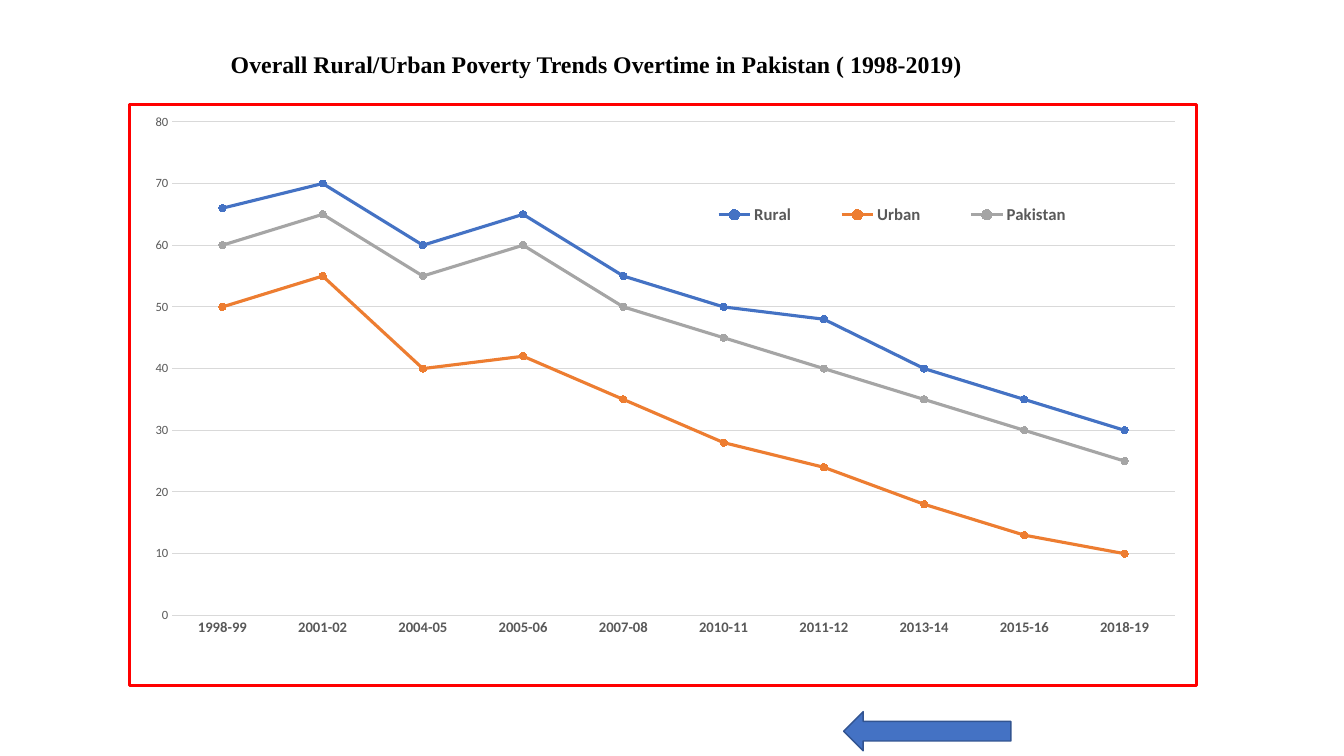
"""Build a slide with a line chart of poverty trends in Pakistan."""
from dataclasses import dataclass

from lxml.etree import _Element as Element
from pptx import Presentation
from pptx.chart.chart import Chart
from pptx.chart.data import CategoryChartData
from pptx.dml.color import RGBColor
from pptx.enum.chart import XL_CHART_TYPE as ChartType
from pptx.enum.chart import XL_LEGEND_POSITION as LegendPos
from pptx.enum.chart import XL_MARKER_STYLE as Marker
from pptx.enum.chart import XL_TICK_MARK as Tick
from pptx.enum.shapes import MSO_SHAPE as Shape
from pptx.enum.text import MSO_AUTO_SIZE as AutoSize
from pptx.oxml import parse_xml
from pptx.oxml.ns import nsdecls, qn
from pptx.slide import Slide
from pptx.text.text import Font
from pptx.util import Pt

COLORS = {
    "black": "000000",
    "blue": "4472C4",
    "orange": "ED7D31",
    "gray": "A5A5A5",
    "label": "595959",
    "grid": "D9D9D9",
    "frame": "FF0000",
    "outline": "325491",
}
YEARS = ["1998-99", "2001-02", "2004-05", "2005-06", "2007-08",
         "2010-11", "2011-12", "2013-14", "2015-16", "2018-19"]


@dataclass(frozen=True)
class Trend:
    name: str
    color: str
    values: tuple[int, ...]


@dataclass(frozen=True)
class Box:
    left: float
    top: float
    width: float
    height: float

    def points(self) -> tuple[Pt, Pt, Pt, Pt]:
        return Pt(self.left), Pt(self.top), Pt(self.width), Pt(self.height)


TRENDS = [
    Trend("Rural", "blue", (66, 70, 60, 65, 55, 50, 48, 40, 35, 30)),
    Trend("Urban", "orange", (50, 55, 40, 42, 35, 28, 24, 18, 13, 10)),
    Trend("Pakistan", "gray", (60, 65, 55, 60, 50, 45, 40, 35, 30, 25)),
]


def rgb(name: str) -> RGBColor:
    return RGBColor.from_string(COLORS[name])


def style_font(font: Font, size: float, color: str, bold: bool = False,
               name: str = "Calibri") -> None:
    font.size, font.bold, font.name = Pt(size), bold, name
    font.color.rgb = rgb(color)


def place(part: Element, index: int, x: float, y: float, w: float, h: float,
          inner: bool = False) -> None:
    for old in part.findall(qn("c:layout")):
        part.remove(old)
    target = '<c:layoutTarget val="inner"/>' if inner else ""
    part.insert(index, parse_xml(
        f'<c:layout {nsdecls("c")}><c:manualLayout>{target}'
        '<c:xMode val="edge"/><c:yMode val="edge"/>'
        f'<c:x val="{x}"/><c:y val="{y}"/><c:w val="{w}"/><c:h val="{h}"/>'
        '</c:manualLayout></c:layout>'))


def add_frame(chart: Chart) -> None:
    chart.element.find(qn("c:chart")).addnext(parse_xml(
        f'<c:spPr {nsdecls("c", "a")}><a:noFill/><a:ln w="{Pt(2.25)}">'
        f'<a:solidFill><a:srgbClr val="{COLORS["frame"]}"/></a:solidFill>'
        '</a:ln></c:spPr>'))


def style_axes(chart: Chart) -> None:
    years, rates = chart.category_axis, chart.value_axis
    for axis in (years, rates):
        axis.major_tick_mark = axis.minor_tick_mark = Tick.NONE
    style_font(years.tick_labels.font, 10.5, "label", bold=True)
    style_font(rates.tick_labels.font, 9, "label")
    rates.minimum_scale, rates.maximum_scale, rates.major_unit = 0, 80, 10
    rates.format.line.fill.background()
    for line in (years.format.line, rates.major_gridlines.format.line):
        line.color.rgb, line.width = rgb("grid"), Pt(0.75)


def add_trend_chart(s: Slide, box: Box) -> None:
    data = CategoryChartData()
    data.categories = YEARS
    for trend in TRENDS:
        data.add_series(trend.name, trend.values)
    chart = s.shapes.add_chart(ChartType.LINE_MARKERS, *box.points(), data).chart
    chart.has_title = False
    style_font(chart.font, 10, "black")
    style_axes(chart)
    chart.plots[0].vary_by_categories = False
    for series, trend in zip(chart.plots[0].series, TRENDS):
        color = rgb(trend.color)
        series.smooth = False
        series.format.line.color.rgb = color
        series.format.line.width = Pt(2.25)
        series.marker.style, series.marker.size = Marker.CIRCLE, 5
        series.marker.format.fill.solid()
        series.marker.format.fill.fore_color.rgb = color
        series.marker.format.line.color.rgb = color
    chart.has_legend = True
    chart.legend.position = LegendPos.BOTTOM
    chart.legend.include_in_layout = False
    style_font(chart.legend.font, 12, "label", bold=True)
    body = chart.element.find(qn("c:chart"))
    place(body.find(qn("c:plotArea")), 0, 0.04, 0.03, 0.94, 0.85, inner=True)
    place(body.find(qn("c:legend")), 1, 0.51, 0.16, 0.41, 0.06)
    add_frame(chart)


def add_title(s: Slide, text: str, box: Box) -> None:
    tf = s.shapes.add_textbox(*box.points()).text_frame
    tf.word_wrap = True
    tf.auto_size = AutoSize.SHAPE_TO_FIT_TEXT
    p = tf.paragraphs[0]
    p.text = text
    style_font(p.runs[0].font, 17, "black", bold=True, name="Times New Roman")


def add_arrow(s: Slide, box: Box) -> None:
    sp = s.shapes.add_shape(Shape.LEFT_ARROW, *box.points())
    sp.shadow.inherit = False
    sp.fill.solid()
    sp.fill.fore_color.rgb = rgb("blue")
    sp.line.color.rgb, sp.line.width = rgb("outline"), Pt(1)


def main() -> None:
    prs = Presentation()
    prs.slide_width, prs.slide_height = Pt(960), Pt(540)
    s = prs.slides.add_slide(prs.slide_layouts[6])
    add_trend_chart(s, Box(91.5, 73.5, 764, 417))
    add_title(s, " Overall Rural/Urban Poverty Trends Overtime in Pakistan ( 1998-2019)",
              Box(153.5, 31.7, 628, 28))
    add_arrow(s, Box(602.6, 508.3, 119.5, 28))
    prs.save("out.pptx")


if __name__ == "__main__":
    main()
